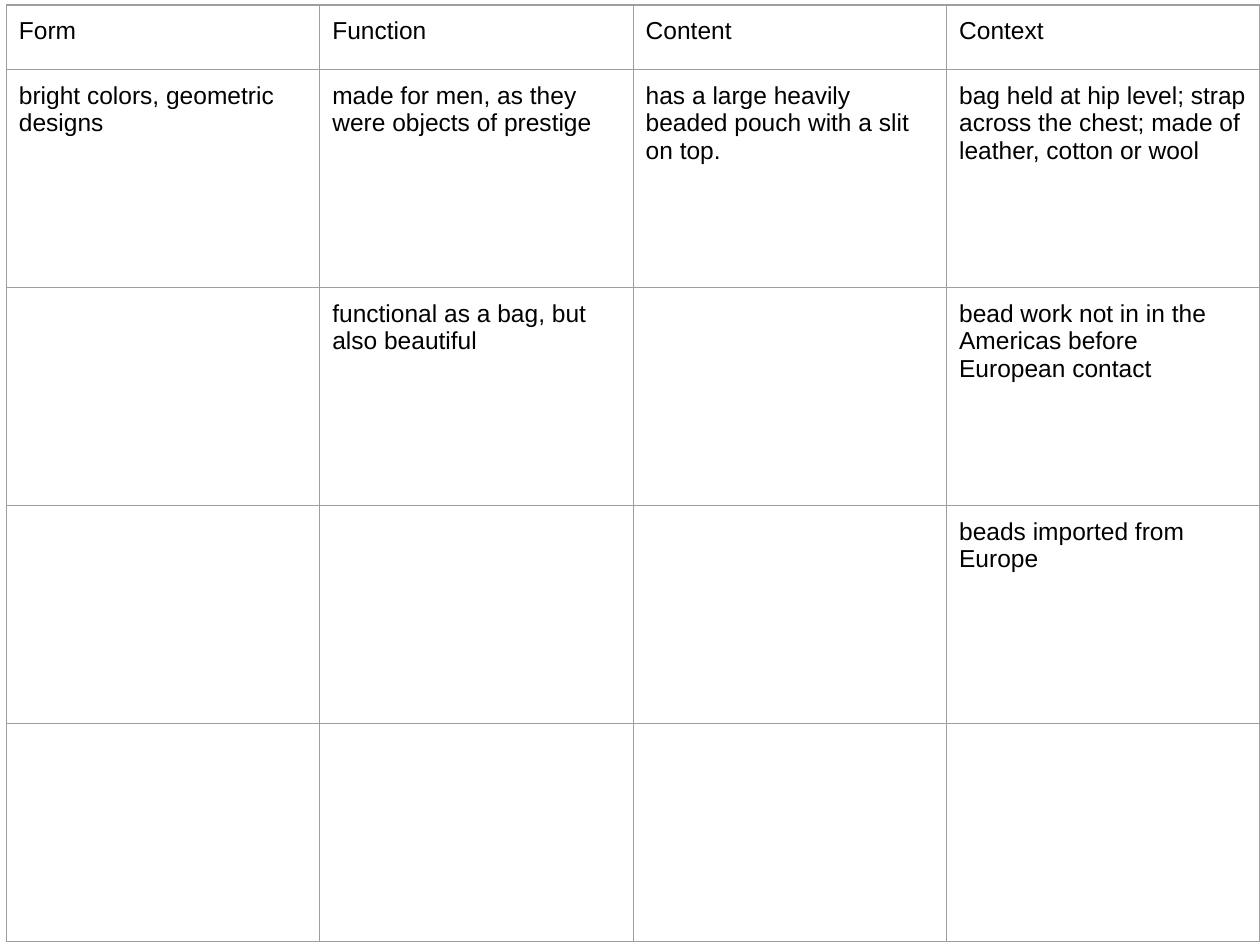
from dataclasses import dataclass

from lxml import etree
from pptx import Presentation
from pptx import util as u
from pptx.dml.color import RGBColor
from pptx.oxml.ns import qn

COLORS = {"text": "000000", "border": "9E9E9E", "background": "FFFFFF"}
LEFT, TOP, WIDTH = 0.05, 0.04, 9.95
HEADER_HEIGHT, BODY_HEIGHT = 0.51, 1.73


@dataclass
class Row:
    height: float
    texts: tuple[str, str, str, str]


ROWS = [
    Row(HEADER_HEIGHT, ("Form", "Function", "Content", "Context")),
    Row(BODY_HEIGHT, (
        "bright colors, geometric designs",
        "made for men, as they were objects of prestige",
        "has a large heavily beaded pouch with a slit on top.",
        "bag held at hip level; strap across the chest; made of leather, cotton or wool",
    )),
    Row(BODY_HEIGHT, (
        "",
        "functional as a bag, but also beautiful",
        "",
        "bead work not in in the Americas before European contact",
    )),
    Row(BODY_HEIGHT, ("", "", "", "beads imported from Europe")),
    Row(BODY_HEIGHT, ("", "", "", "")),
]


def set_text(cell, text: str, *, size: float = 14, font: str = "Arial",
             color: str = COLORS["text"], margin: float = 0.1) -> None:
    cell.margin_left = cell.margin_right = u.Inches(margin)
    cell.margin_top = cell.margin_bottom = u.Inches(margin)
    p = cell.text_frame.paragraphs[0]
    p.font.size = u.Pt(size)
    if text:
        r = p.add_run()
        r.text = text
        r.font.size = u.Pt(size)
        r.font.name = font
        r.font.color.rgb = RGBColor.from_string(color)


def set_borders(cell, color: str, width: float) -> None:
    tc_pr = cell._tc.get_or_add_tcPr()
    # Border lines come before the fill in the cell properties
    for i, side in enumerate(("lnL", "lnR", "lnT", "lnB")):
        ln = etree.Element(qn(f"a:{side}"), w=str(u.Pt(width)))
        fill = etree.SubElement(ln, qn("a:solidFill"))
        etree.SubElement(fill, qn("a:srgbClr"), val=color)
        tc_pr.insert(i, ln)


def add_grid(s, rows: list[Row]) -> None:
    n_cols = len(rows[0].texts)
    height = sum(row.height for row in rows)
    table = s.shapes.add_table(len(rows), n_cols, u.Inches(LEFT), u.Inches(TOP),
                               u.Inches(WIDTH), u.Inches(height)).table
    table.first_row = table.horz_banding = False
    for column in table.columns:
        column.width = u.Inches(WIDTH / n_cols)
    for i, row in enumerate(rows):
        table.rows[i].height = u.Inches(row.height)
        for j, content in enumerate(row.texts):
            cell = table.cell(i, j)
            cell.fill.background()
            set_text(cell, content)
            set_borders(cell, COLORS["border"], 0.75)


def main() -> None:
    prs = Presentation()
    prs.slide_width, prs.slide_height = u.Inches(10), u.Inches(7.5)
    s = prs.slides.add_slide(prs.slide_layouts[6])
    s.background.fill.solid()
    s.background.fill.fore_color.rgb = RGBColor.from_string(COLORS["background"])
    # Analysis table
    add_grid(s, ROWS)
    prs.save("out.pptx")


if __name__ == "__main__":
    main()
